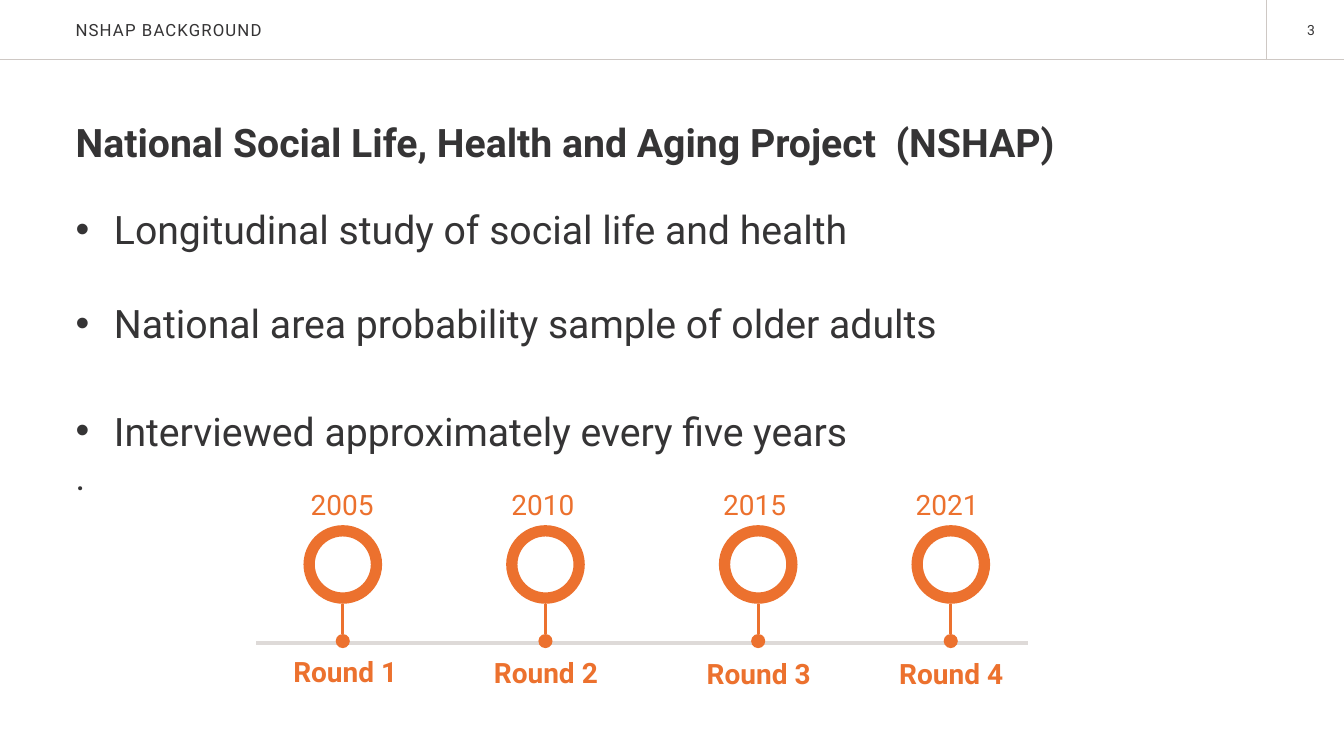
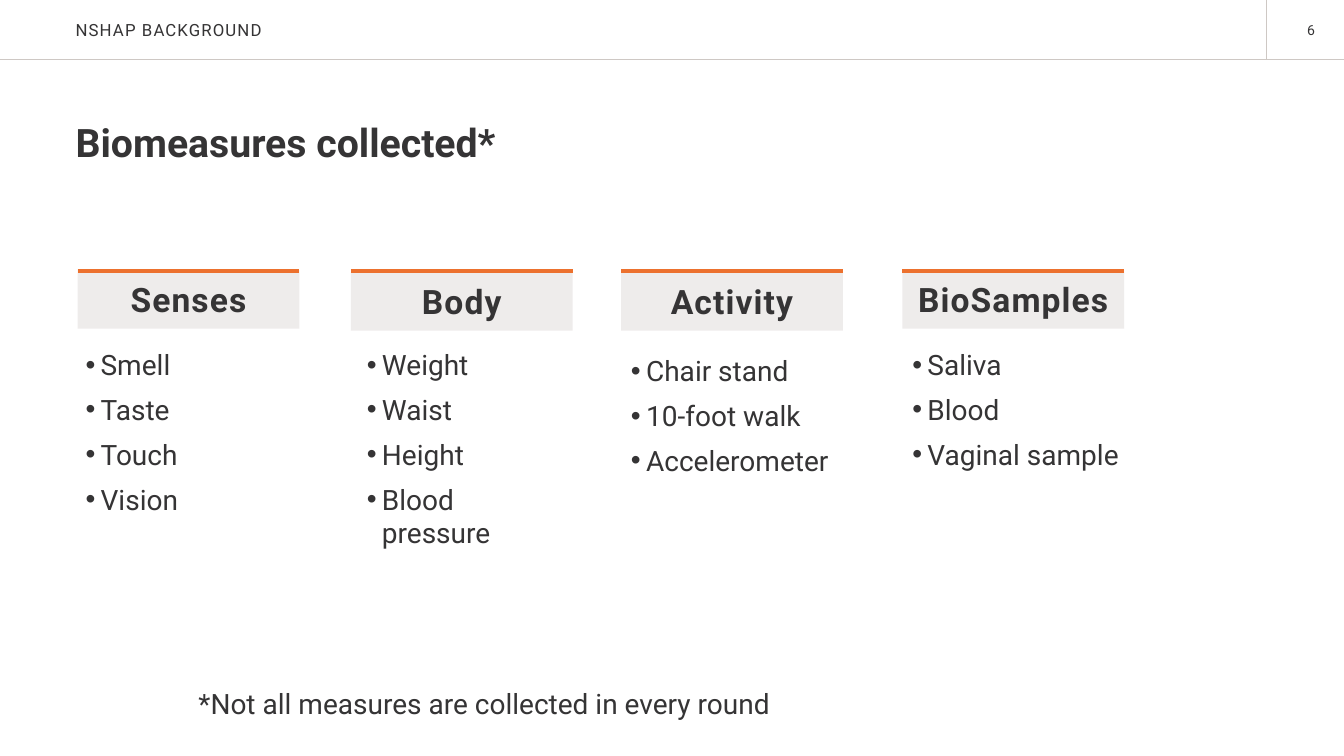
import dataclasses

import pptx
import pptx.dml.color
import pptx.enum.shapes
import pptx.enum.text
import pptx.oxml.ns
import pptx.oxml.xmlchemy
import pptx.util
import lxml.etree

EMU_PER_PX = 9144
SHAPE = pptx.enum.shapes.MSO_SHAPE
ALIGN = pptx.enum.text.PP_ALIGN
ANCHOR = pptx.enum.text.MSO_ANCHOR
qn = pptx.oxml.ns.qn


@dataclasses.dataclass(frozen=True)
class Theme:
    font: str = "Roboto"
    ink: str = "353435"
    accent: str = "EC712E"
    rule: str = "CEC8C4"
    panel: str = "DEDAD8"
    number: int = 10
    header: int = 12
    label: int = 20
    column: int = 24
    heading: int = 28
    dot: int = 26
    tracking: int = 80


THEME = Theme()


def px(*lengths):
    return [pptx.util.Emu(round(n * EMU_PER_PX)) for n in lengths]


def rgb(color):
    return pptx.dml.color.RGBColor.from_string(color)


def add_text(tf, text, size=THEME.label, color=THEME.ink, bold=False,
             align=ALIGN.LEFT, tracking=0, indent=0, before=0, after=0):
    p = tf.paragraphs[0]
    if p.runs:
        p = tf.add_paragraph()
    pPr = p._p.get_or_add_pPr()
    margin = px(indent)[0]
    pPr.set("marL", str(margin))
    pPr.set("indent", str(-margin))
    if indent:
        lxml.etree.SubElement(pPr, qn("a:buFont")).set("typeface", "Arial")
        lxml.etree.SubElement(pPr, qn("a:buChar")).set("char", "•")
    else:
        lxml.etree.SubElement(pPr, qn("a:buNone"))
    p.alignment = align
    p.space_before = pptx.util.Pt(before)
    p.space_after = pptx.util.Pt(after)
    r = p.add_run()
    r.text = text
    r.font.name = THEME.font
    r.font.size = pptx.util.Pt(size)
    r.font.bold = bold
    r.font.color.rgb = rgb(color)
    if tracking:
        r._r.get_or_add_rPr().set("spc", str(tracking))
    return p


class Deck:
    def __init__(self):
        self.prs = pptx.Presentation()
        self.prs.slide_width, self.prs.slide_height = px(1333, 750)
        self.s = None

    def new_slide(self, header, number):
        self.s = self.prs.slides.add_slide(self.prs.slide_layouts[1])
        self.line(0, 59, 1333, 59, THEME.rule, 0.65)
        self.line(1256, 0, 1256, 59, THEME.rule, 0.65)
        add_text(self.box(1264, 16, 50, 27), number, size=THEME.number,
                 align=ALIGN.RIGHT)
        tf = self.placeholder(0, 75, 0, 930, 60, ANCHOR.MIDDLE)
        add_text(tf, header, size=THEME.header, tracking=THEME.tracking)

    def frame(self, tf, inset_x, inset_y, anchor=ANCHOR.TOP, wrap=True):
        tf.word_wrap = wrap
        tf.auto_size = pptx.enum.text.MSO_AUTO_SIZE.NONE
        tf.vertical_anchor = anchor
        tf.margin_left = tf.margin_right = px(inset_x)[0]
        tf.margin_top = tf.margin_bottom = px(inset_y)[0]
        return tf

    def placeholder(self, index, x, y, w, h, anchor=ANCHOR.TOP):
        sp = self.s.placeholders[index]
        sp.left, sp.top, sp.width, sp.height = px(x, y, w, h)
        return self.frame(sp.text_frame, 0, 0, anchor)

    def body(self, heading, h):
        tf = self.placeholder(1, 75, 117, 1183, h)
        add_text(tf, heading, size=THEME.heading, bold=True)
        return tf

    def box(self, x, y, w, h, inset_x=10, inset_y=5, wrap=True):
        sp = self.s.shapes.add_textbox(*px(x, y, w, h))
        return self.frame(sp.text_frame, inset_x, inset_y, wrap=wrap)

    def shape(self, kind, x, y, w, h, color, opacity=100):
        sp = self.s.shapes.add_shape(kind, *px(x, y, w, h))
        sp.shadow.inherit = False
        sp.fill.solid()
        sp.fill.fore_color.rgb = rgb(color)
        sp.line.fill.background()
        if opacity < 100:
            clr = sp._element.spPr.find(".//" + qn("a:srgbClr"))
            lxml.etree.SubElement(clr, qn("a:alpha")).set(
                "val", str(opacity * 1000))
        return sp

    def line(self, x1, y1, x2, y2, color, width):
        cxn = self.s.shapes.add_connector(
            pptx.enum.shapes.MSO_CONNECTOR.STRAIGHT, *px(x1, y1, x2, y2))
        cxn.line.color.rgb = rgb(color)
        cxn.line.width = pptx.util.Pt(width)
        lxml.etree.SubElement(cxn._element.spPr, qn("a:effectLst"))
        return cxn

    def milestone(self, year, label, center, year_x, label_x, label_y):
        add_text(self.box(year_x, 479, 83, 44, wrap=False), year,
                 color=THEME.accent, align=ALIGN.CENTER)
        add_text(self.box(label_x, label_y, 161, 34, 0, 0), label,
                 color=THEME.accent, bold=True, align=ALIGN.CENTER, after=3)
        dot = self.shape(SHAPE.OVAL, center - 7, 629, 14, 14, THEME.accent)
        stem = self.line(center, 599, center, 629, THEME.accent, 2)
        stem.end_connect(dot, 0)
        ring = self.shape(SHAPE.DONUT, center - 39, 521, 78, 78, THEME.accent)
        ring.adjustments[0] = 0.144

    def column(self, title, items, x, y, list_x, list_y, list_w):
        sp = self.shape(SHAPE.RECTANGLE, x, y, 220, 58, THEME.panel, 50)
        tf = self.frame(sp.text_frame, 10, 5, ANCHOR.MIDDLE)
        add_text(tf, title, size=THEME.column, bold=True,
                 align=ALIGN.CENTER, tracking=THEME.tracking)
        self.line(x, 269, x + 220, 269, THEME.accent, 3)
        tf = self.box(list_x, list_y, list_w, 339, 10, 0)
        for item in items:
            add_text(tf, item, indent=15, after=8)


def timeline_slide(deck):
    deck.new_slide("NSHAP BACKGROUND", "3")
    tf = deck.body("National Social Life, Health and Aging Project  (NSHAP)", 380)
    for text, before in [
        ("Longitudinal study of social life and health", 29),
        ("National area probability sample of older adults", 33.5),
        ("Interviewed approximately every five years", 43),
    ]:
        add_text(tf, text, size=THEME.heading, indent=38, before=before)
    add_text(tf, ".", size=THEME.dot)
    deck.line(254, 638, 1020, 638, THEME.panel, 3.25)
    milestones = [
        ("2005", 340, 298, 262, 649),
        ("2010", 541, 497, 461, 650),
        ("2015", 752, 707, 672, 651),
        ("2021", 943, 898, 863, 651),
    ]
    for i, (year, *places) in enumerate(milestones, 1):
        deck.milestone(year, f"Round {i}", *places)


def biomeasures_slide(deck):
    deck.new_slide("NSHAP BACKGROUND", "6")
    deck.body("Biomeasures collected*", 100)
    for column in [
        ("Senses", ["Smell", "Taste", "Touch", "Vision"],
         77, 268, 75, 345, 220),
        ("Body", ["Weight", "Waist", "Height", "Blood pressure"],
         348, 270, 354, 345, 220),
        ("Activity", ["Chair stand", "10-foot walk", "Accelerometer"],
         616, 270, 616, 351, 220),
        ("BioSamples", ["Saliva", "Blood", "Vaginal sample"],
         895, 268, 895, 345, 263),
    ]:
        deck.column(*column)
    add_text(deck.box(187, 676, 781, 44),
             "*Not all measures are collected in every round")


def main():
    deck = Deck()
    timeline_slide(deck)
    biomeasures_slide(deck)
    deck.prs.save("out.pptx")


if __name__ == "__main__":
    main()
